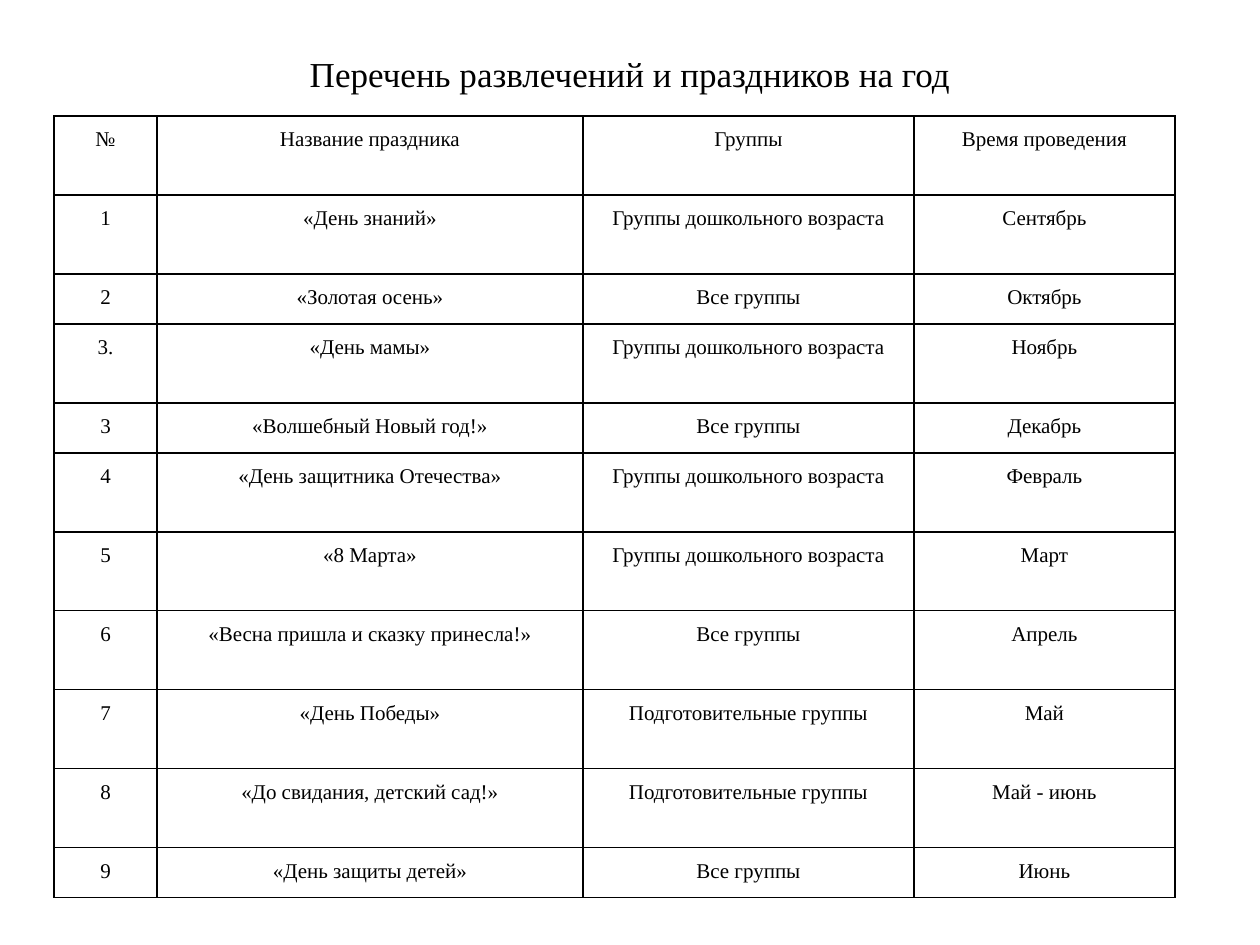
"""Build a slide with the yearly table of kindergarten celebrations."""
import pptx
import pptx.dml.color
import pptx.enum.text
import pptx.oxml
import pptx.oxml.ns
import pptx.util

BLACK = pptx.dml.color.RGBColor(0, 0, 0)
FONT = "Times New Roman"
CENTER = pptx.enum.text.PP_ALIGN.CENTER
TOP = pptx.enum.text.MSO_ANCHOR.TOP
TALL, SHORT = 79, 50
COLUMN_WIDTHS = [103, 426, 331, 261]
PRESCHOOL = "Группы дошкольного возраста"
EVERYONE = "Все группы"
SENIORS = "Подготовительные группы"

ROWS = [
    (TALL, "№", "Название праздника", "Группы", "Время проведения"),
    (TALL, "1", "«День знаний»", PRESCHOOL, "Сентябрь"),
    (SHORT, "2", "«Золотая осень»", EVERYONE, "Октябрь"),
    (TALL, "3.", "«День мамы»", PRESCHOOL, "Ноябрь"),
    (SHORT, "3", "«Волшебный Новый год!»", EVERYONE, "Декабрь"),
    (TALL, "4", "«День защитника Отечества»", PRESCHOOL, "Февраль"),
    (TALL, "5", "«8 Марта»", PRESCHOOL, "Март"),
    (TALL, "6", "«Весна пришла и сказку принесла!»", EVERYONE, "Апрель"),
    (TALL, "7", "«День Победы»", SENIORS, "Май"),
    (TALL, "8", "«До свидания, детский сад!»", SENIORS, "Май - июнь"),
    (SHORT, "9", "«День защиты детей»", EVERYONE, "Июнь"),
]


def px(length):
    return pptx.util.Emu(round(length * 914400 / 126))


def write(para, text, size, **paragraph_format):
    span = para.add_run()
    span.text = text
    span.font.color.rgb = BLACK
    for name, value in {"name": FONT, "size": pptx.util.Pt(size)}.items():
        setattr(span.font, name, value)
    for name, value in {"alignment": CENTER, **paragraph_format}.items():
        setattr(para, name, value)


deck = pptx.Presentation()
deck.slide_width, deck.slide_height = px(1260), px(945)
page = deck.slides.add_slide(deck.slide_layouts[5])

title = page.shapes.title
for name, value in {"left": 63, "top": 38, "width": 1134, "height": 158}.items():
    setattr(title, name, px(value))
for name, value in {"vertical_anchor": TOP, "margin_top": px(14), "word_wrap": True}.items():
    setattr(title.text_frame, name, value)
write(title.text_frame.paragraphs[0], "Перечень развлечений и праздников на год", 20)

table_height = sum(row[0] for row in ROWS)
table = page.shapes.add_table(
    len(ROWS), len(COLUMN_WIDTHS), px(54), px(116), px(sum(COLUMN_WIDTHS)), px(table_height)
).table
table.first_row = table.horz_banding = False
for column, width in zip(table.columns, COLUMN_WIDTHS):
    column.width = px(width)

CELL_FORMAT = {
    "margin_left": px(6),
    "margin_right": px(6),
    "margin_top": 0,
    "margin_bottom": 0,
    "vertical_anchor": TOP,
}
for row, (height, *texts) in zip(table.rows, ROWS):
    row.height = px(height)
    for cell, text in zip(row.cells, texts):
        for name, value in CELL_FORMAT.items():
            setattr(cell, name, value)
        write(
            cell.text_frame.paragraphs[0], text, 12,
            line_spacing=1.5, space_after=pptx.util.Pt(12),
        )
        properties = cell._tc.get_or_add_tcPr()
        for side in ("lnL", "lnR", "lnT", "lnB"):
            properties.append(pptx.oxml.parse_xml(
                f'<a:{side} {pptx.oxml.ns.nsdecls("a")} w="12700">'
                f'<a:solidFill><a:srgbClr val="{BLACK}"/></a:solidFill></a:{side}>'
            ))
        cell.fill.background()

deck.save("out.pptx")
